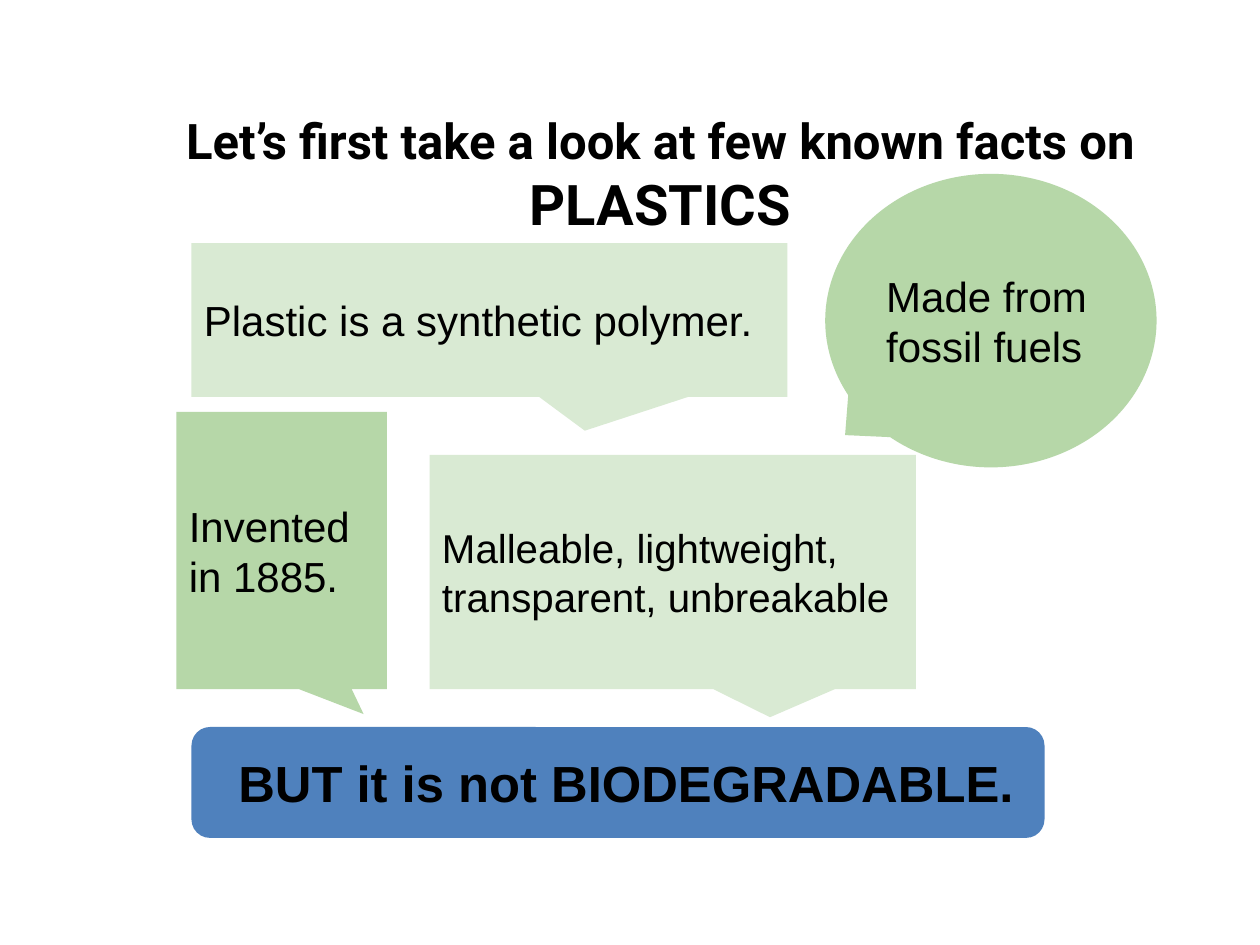
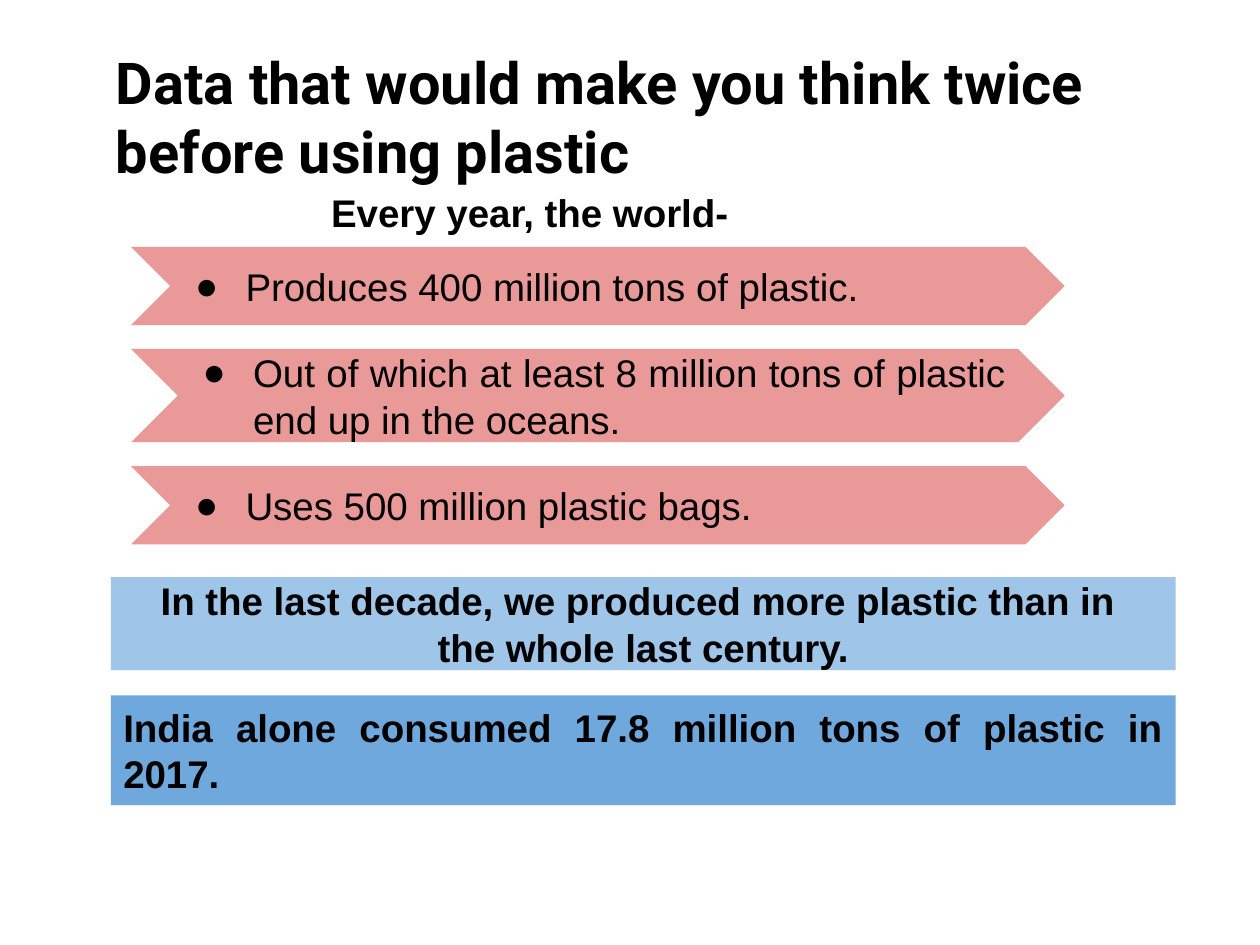
from dataclasses import dataclass

from lxml import etree
from pptx import Presentation
from pptx.dml.color import RGBColor
from pptx.enum.shapes import MSO_SHAPE
from pptx.enum.text import MSO_ANCHOR, MSO_AUTO_SIZE, PP_ALIGN
from pptx.oxml.ns import qn
from pptx.util import Inches, Pt

RECT_CALLOUT = MSO_SHAPE.RECTANGULAR_CALLOUT
ROUND_CALLOUT = MSO_SHAPE.ROUNDED_RECTANGULAR_CALLOUT
OVAL_CALLOUT = MSO_SHAPE.OVAL_CALLOUT
ROUNDED = MSO_SHAPE.ROUNDED_RECTANGLE
RECTANGLE = MSO_SHAPE.RECTANGLE
CHEVRON = MSO_SHAPE.CHEVRON
TOP, MIDDLE = MSO_ANCHOR.TOP, MSO_ANCHOR.MIDDLE
NO_FIT = MSO_AUTO_SIZE.NONE
LEFT, CENTER, JUSTIFY = PP_ALIGN.LEFT, PP_ALIGN.CENTER, PP_ALIGN.JUSTIFY

SLIDE_WIDTH, SLIDE_HEIGHT = Inches(10), Inches(7.5)
COLUMN, ROW = SLIDE_WIDTH / 100, SLIDE_HEIGHT / 75
TITLE_ONLY = 5
BODY_FONT, TITLE_FONT = "Arial", "Roboto"
BLACK = "000000"
GREEN, PALE_GREEN = "B6D7A8", "D9EAD3"
PINK = "EA9999"
ROYAL_BLUE, LIGHT_BLUE, MID_BLUE = "4F81BD", "9FC5E8", "6FA8DC"


@dataclass
class Box:
    left: float
    top: float
    width: float
    height: float

    def inner(self, left, top, width, height):
        return Box(self.left + left, self.top + top, width, height)

    def lengths(self):
        return (round(self.left * COLUMN), round(self.top * ROW),
                round(self.width * COLUMN), round(self.height * ROW))


def color(value):
    return RGBColor.from_string(value)


def set_format(font, values):
    for name, value in values.items():
        setattr(font, name, value)
    font.color.rgb = color(BLACK)


def set_indent(para, margin, hanging=0):
    properties = para._p.get_or_add_pPr()
    properties.set("marL", str(Inches(margin)))
    properties.set("indent", str(Inches(-hanging)))


def add_bullet(para):
    set_indent(para, 0.5, 0.4)
    properties = para._p.get_or_add_pPr()
    tint = etree.SubElement(properties, qn("a:buClr"))
    etree.SubElement(tint, qn("a:srgbClr"), val=BLACK)
    etree.SubElement(properties, qn("a:buFont"), typeface=BODY_FONT)
    etree.SubElement(properties, qn("a:buChar"), char="●")


def write(shape, text, size, align=LEFT, bold=False, anchor=MIDDLE,
          indent=0, bullet=False):
    frame = shape.text_frame
    frame.word_wrap = True
    frame.vertical_anchor = anchor
    for side in ("left", "right", "top", "bottom"):
        setattr(frame, f"margin_{side}", Inches(0.1))
    frame.text = text
    for para in frame.paragraphs:
        para.alignment = align
        if bullet:
            add_bullet(para)
        elif indent:
            set_indent(para, indent)
        set_format(para.font, {"name": BODY_FONT, "size": Pt(size), "bold": bold})


def add_panel(page, box, kind, fill, adjustments=()):
    shape = page.shapes.add_shape(kind, *box.lengths())
    shape.shadow.inherit = False
    shape.fill.solid()
    shape.fill.fore_color.rgb = color(fill)
    shape.line.fill.background()
    for index, value in enumerate(adjustments):
        shape.adjustments[index] = value
    return shape


def add_title(page, box, lines, align):
    title = page.shapes.title
    title.left, title.top, title.width, title.height = box.lengths()
    frame = title.text_frame
    frame.auto_size = NO_FIT
    frame.text = "\n".join(text for text, size in lines)
    for para, (text, size) in zip(frame.paragraphs, lines):
        para.alignment = align
        set_format(para.font, {"name": TITLE_FONT, "size": Pt(size), "bold": True})


def add_callouts(page, box):
    callouts = [
        ("Invented in 1885.", 24, ROUND_CALLOUT, GREEN,
         (0, 18.9, 16.7, 22), (0.39, 0.59, 0)),
        ("Made from fossil fuels", 24, OVAL_CALLOUT, GREEN,
         (51.5, 0, 26.3, 23.3), (-0.44, 0.39)),
        ("Plastic is a synthetic polymer.", 24, RECT_CALLOUT, PALE_GREEN,
         (1.2, 5.5, 47.3, 12.2), (0.16, 0.72)),
        ("Malleable, lightweight,\ntransparent, unbreakable", 23, ROUND_CALLOUT,
         PALE_GREEN, (20.1, 22.3, 38.6, 18.6), (0.2, 0.62, 0)),
    ]
    for text, size, kind, fill, area, tail in callouts:
        write(add_panel(page, box.inner(*area), kind, fill, tail), text, size)


def add_conclusion(page, box):
    panel = add_panel(page, box, ROUNDED, ROYAL_BLUE)
    write(panel, "BUT it is not BIODEGRADABLE.", 29, bold=True, indent=0.23)


def add_lead_in(page, box):
    lead_in = page.shapes.add_textbox(*box.lengths())
    write(lead_in, "Every year, the world-", 22, JUSTIFY, True, TOP, indent=1.95)


def add_chevrons(page, box, gap=1.9):
    facts = [
        ("Produces 400 million tons of plastic.", 6.2),
        ("Out of which at least 8 million tons of plastic end up in the oceans.", 7.4),
        ("Uses 500 million plastic bags.", 6.2),
    ]
    top = 0
    for text, height in facts:
        area = box.inner(0, top, box.width, height)
        write(add_panel(page, area, CHEVRON, PINK), text, 22, JUSTIFY, bullet=True)
        top += height + gap


def add_banners(page, box, gap=2):
    banners = [
        ("In the last decade, we produced more plastic than in \n"
         "the whole last century.", 7.4, LIGHT_BLUE, CENTER),
        ("India alone consumed 17.8 million tons of plastic in 2017.",
         8.7, MID_BLUE, JUSTIFY),
    ]
    top = 0
    for text, height, fill, align in banners:
        area = box.inner(0, top, box.width, height)
        write(add_panel(page, area, RECTANGLE, fill), text, 22, align, True)
        top += height + gap


def build_facts(page):
    title = [("Let’s first take a look at few known facts on", 28), ("PLASTICS", 32)]
    add_title(page, Box(7.4, 7.7, 90, 12.2), title, CENTER)
    add_callouts(page, Box(14, 13.8, 77.8, 40.9))
    add_conclusion(page, Box(15.2, 57.7, 67.7, 8.8))


def build_data(page):
    title = [("Data that would make you think twice before using plastic", 33)]
    add_title(page, Box(8.2, 3.5, 88.5, 11.4), title, LEFT)
    add_lead_in(page, Box(5.8, 14, 85.7, 4.6))
    add_chevrons(page, Box(10.4, 19.6, 74.1, 23.6))
    add_banners(page, Box(8.8, 45.8, 84.5, 18.1))


def main():
    deck = Presentation()
    deck.slide_width, deck.slide_height = SLIDE_WIDTH, SLIDE_HEIGHT
    for build in (build_facts, build_data):
        build(deck.slides.add_slide(deck.slide_layouts[TITLE_ONLY]))
    deck.save("out.pptx")


if __name__ == "__main__":
    main()
